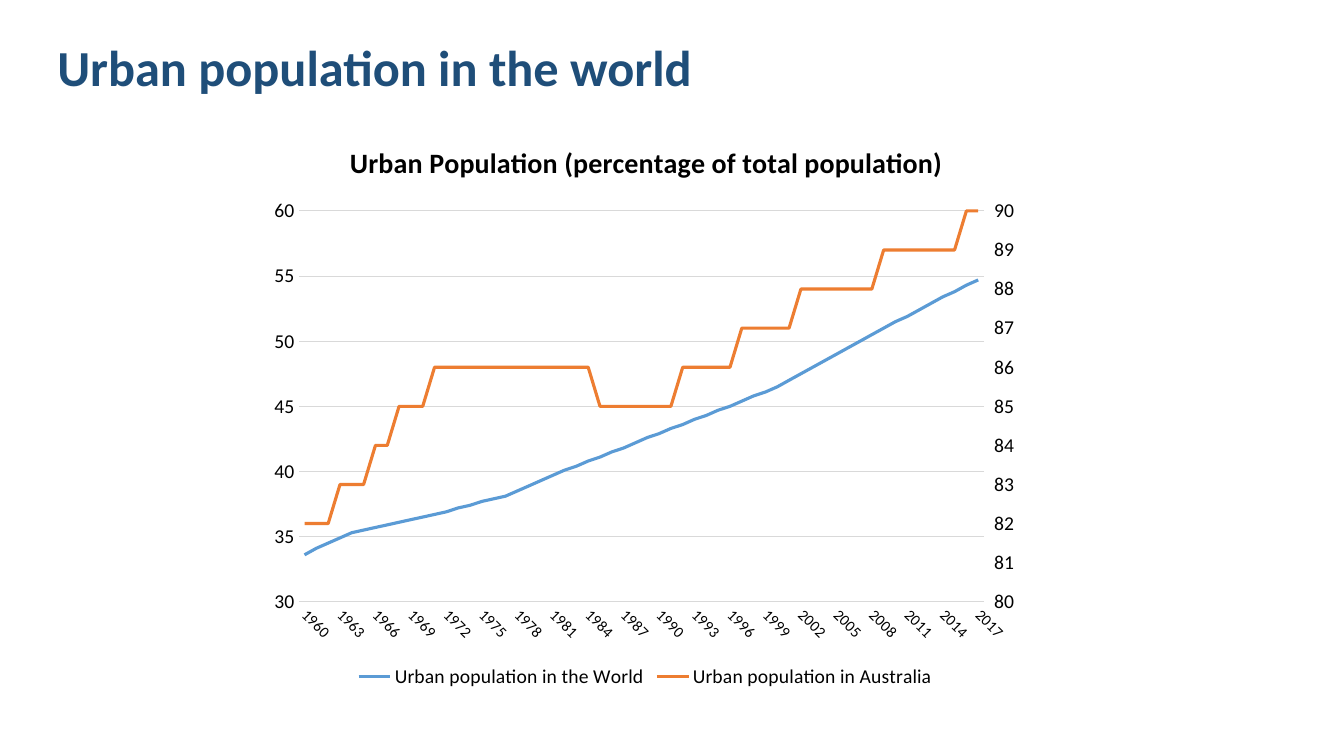
from copy import deepcopy
from dataclasses import dataclass

from pptx import Presentation
from pptx.chart.data import CategoryChartData
from pptx.dml.color import RGBColor
from pptx.enum.chart import XL_CHART_TYPE, XL_LEGEND_POSITION, XL_TICK_MARK
from pptx.enum.text import MSO_AUTO_SIZE
from pptx.oxml import parse_xml
from pptx.oxml.ns import nsdecls, qn
from pptx.util import Inches, Pt

FONT = "Calibri"
NAVY = RGBColor(0x1F, 0x4E, 0x79)
BLACK = RGBColor(0, 0, 0)
GREY = RGBColor(0xD9, 0xD9, 0xD9)
BLUE = RGBColor(0x5B, 0x9B, 0xD5)
ORANGE = RGBColor(0xED, 0x7D, 0x31)


@dataclass
class Trend:
    name: str
    color: RGBColor
    values: list[float]


YEARS = [str(year) for year in range(1960, 2018)]
TRENDS = [
    Trend("Urban population in the World", BLUE, [
        33.6, 34.1, 34.5, 34.9, 35.3, 35.5, 35.7, 35.9, 36.1, 36.3,
        36.5, 36.7, 36.9, 37.2, 37.4, 37.7, 37.9, 38.1, 38.5, 38.9,
        39.3, 39.7, 40.1, 40.4, 40.8, 41.1, 41.5, 41.8, 42.2, 42.6,
        42.9, 43.3, 43.6, 44, 44.3, 44.7, 45, 45.4, 45.8, 46.1,
        46.5, 47, 47.5, 48, 48.5, 49, 49.5, 50, 50.5, 51,
        51.5, 51.9, 52.4, 52.9, 53.4, 53.8, 54.3, 54.7]),
    Trend("Urban population in Australia", ORANGE, [
        82, 82, 82, 83, 83, 83, 84, 84, 85, 85,
        85, 86, 86, 86, 86, 86, 86, 86, 86, 86,
        86, 86, 86, 86, 86, 85, 85, 85, 85, 85,
        85, 85, 86, 86, 86, 86, 86, 87, 87, 87,
        87, 87, 88, 88, 88, 88, 88, 88, 88, 89,
        89, 89, 89, 89, 89, 89, 90, 90]),
]


def style(font, size: float, color: RGBColor = BLACK, bold: bool = False) -> None:
    font.name = FONT
    font.size = Pt(size)
    font.bold = bold
    font.color.rgb = color


def write(frame, text: str, **look) -> None:
    run = frame.paragraphs[0].add_run()
    run.text = text
    style(run.font, **look)


def layout(left: float, top: float, size: tuple = (), inner: bool = False):
    """Manual placement in fractions of the chart area."""
    parts = '<c:layoutTarget val="inner"/>' if inner else ""
    parts += '<c:xMode val="edge"/><c:yMode val="edge"/>'
    for tag, val in zip("xywh", (left, top, *size)):
        parts += f'<c:{tag} val="{val}"/>'
    return parse_xml(f'<c:layout {nsdecls("c")}><c:manualLayout>{parts}'
                     "</c:manualLayout></c:layout>")


def put(node, **values) -> None:
    """Set the val attribute of named descendants."""
    for tag, val in values.items():
        next(node.iter(qn(f"c:{tag}"))).set("val", str(val))


def split(area) -> None:
    """Move the second series to its own axis on the right."""
    left = area.find(qn("c:lineChart"))
    right = deepcopy(left)
    left.remove(left.findall(qn("c:ser"))[1])
    right.remove(right.findall(qn("c:ser"))[0])
    left.addnext(right)

    cat, val = (deepcopy(area.find(qn(tag))) for tag in ("c:catAx", "c:valAx"))
    for ref, new in zip(right.findall(qn("c:axId")), ("3001", "3002")):
        ref.set("val", new)
    put(cat, axId=3001, crossAx=3002, delete=1)
    put(val, axId=3002, crossAx=3001, axPos="r", crosses="max",
        min=80, max=90, majorUnit=1, majorTickMark="out")
    val.remove(val.find(qn("c:majorGridlines")))
    area.find(qn("c:valAx")).addnext(val)
    val.addnext(cat)


def draw(slide) -> None:
    data = CategoryChartData()
    data.categories = YEARS
    for trend in TRENDS:
        data.add_series(trend.name, trend.values)
    chart = slide.shapes.add_chart(
        XL_CHART_TYPE.LINE, Inches(2.58), Inches(1.25),
        Inches(7.64), Inches(5.62), data).chart
    style(chart.font, 10)

    # Title and legend
    chart.has_title = True
    write(chart.chart_title.text_frame,
          "Urban Population (percentage of total population)", size=20, bold=True)
    title = chart.chart_title._element
    for old in title.findall(qn("c:layout")):
        title.remove(old)
    title.find(qn("c:tx")).addnext(layout(0.11, 0.02))
    chart.has_legend = True
    chart.legend.position = XL_LEGEND_POSITION.BOTTOM
    chart.legend.include_in_layout = False
    style(chart.legend.font, 14)

    # Lines
    plot = chart.plots[0]
    plot.vary_by_categories = False
    for line, trend in zip(plot.series, TRENDS):
        line.smooth = False
        line.format.line.color.rgb = trend.color
        line.format.line.width = Pt(2.25)

    # Axes
    years, share = chart.category_axis, chart.value_axis
    for axis, size in ((years, 11), (share, 14)):
        axis.major_tick_mark = axis.minor_tick_mark = XL_TICK_MARK.NONE
        style(axis.tick_labels.font, size)
        axis.tick_labels.number_format = "0"
        axis.tick_labels.number_format_is_linked = False
    share.minimum_scale, share.maximum_scale, share.major_unit = 30, 60, 5
    share.has_major_gridlines = True
    share.format.line.fill.background()
    for line in (years.format.line, share.major_gridlines.format.line):
        line.color.rgb = GREY
        line.width = Pt(0.75)
    node = years._element
    node.find(qn("c:txPr")).find(qn("a:bodyPr")).set("rot", "2700000")
    node.find(qn("c:noMultiLvlLbl")).addprevious(
        parse_xml(f'<c:tickLblSkip {nsdecls("c")} val="3"/>'))

    # Plot area
    area = chart._chartSpace.chart.plotArea
    for old in area.findall(qn("c:layout")):
        area.remove(old)
    area.insert(0, layout(0.05, 0.15, (0.89, 0.69), inner=True))
    split(area)


def main() -> None:
    deck = Presentation()
    deck.slide_width, deck.slide_height = Inches(13.33), Inches(7.5)
    slide = deck.slides.add_slide(deck.slide_layouts[6])

    # Heading
    box = slide.shapes.add_textbox(
        Inches(0.47), Inches(0.31), Inches(7.29), Inches(0.71))
    box.text_frame.word_wrap = True
    box.text_frame.auto_size = MSO_AUTO_SIZE.SHAPE_TO_FIT_TEXT
    write(box.text_frame, "Urban population in the world",
          size=36, color=NAVY, bold=True)

    draw(slide)
    deck.save("out.pptx")


if __name__ == "__main__":
    main()
